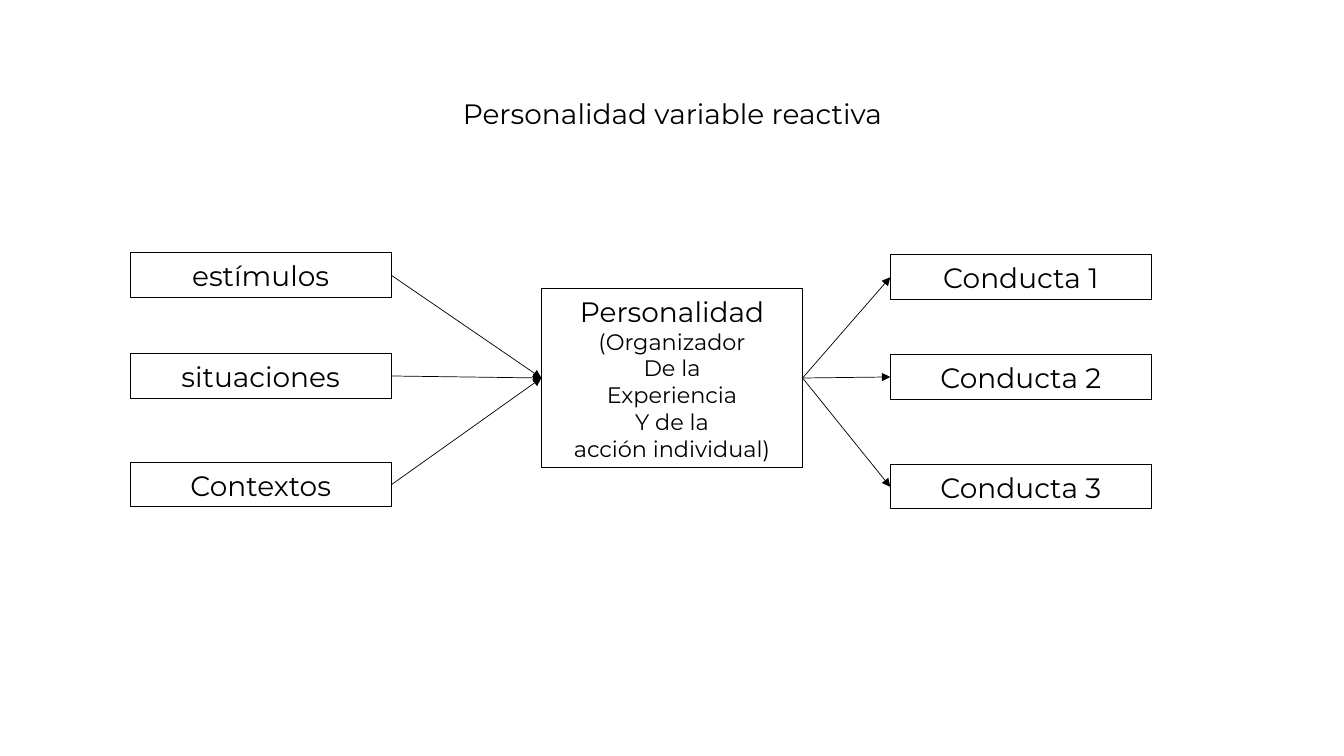
"""Build a slide showing personality as a reactive variable between inputs and conducts."""
from lxml.etree import SubElement
from pptx import Presentation
from pptx.dml.color import RGBColor
from pptx.enum.shapes import MSO_CONNECTOR, MSO_SHAPE
from pptx.enum.text import MSO_ANCHOR, MSO_AUTO_SIZE, PP_ALIGN
from pptx.oxml.ns import qn
from pptx.util import Inches, Pt


def color(hex_code):
    return RGBColor.from_string(hex_code)


def write(shape, text, size=20, detail_size=16, font="Montserrat", ink="000000"):
    frame = shape.text_frame
    frame.word_wrap = True
    frame.auto_size = MSO_AUTO_SIZE.NONE
    frame.vertical_anchor = MSO_ANCHOR.MIDDLE
    frame.text = text
    for index, paragraph in enumerate(frame.paragraphs):
        paragraph.alignment = PP_ALIGN.CENTER
        paragraph.font.name = font
        paragraph.font.size = Pt(detail_size if index else size)
        paragraph.font.color.rgb = color(ink)


BOX_WIDTH, BOX_HEIGHT = 2.59, 0.44
INPUT_LEFT, CENTER_LEFT, CONDUCT_LEFT = 1.29, 5.37, 8.83
CENTER_TOP, CENTER_HEIGHT = 2.86, 1.78
CENTER_MIDDLE = CENTER_TOP + CENTER_HEIGHT / 2

presentation = Presentation()
presentation.slide_width = Inches(13.33)
presentation.slide_height = Inches(7.5)
slide = presentation.slides.add_slide(presentation.slide_layouts[5])

title = slide.shapes.title
title.left, title.top = Inches(3.46), Inches(0.9)
title.width, title.height = Inches(6.42), Inches(0.44)
write(title, "Personalidad variable reactiva")

boxes = [(
    "Personalidad\n(Organizador\nDe la\nExperiencia\nY de la\nacción individual)",
    CENTER_LEFT, CENTER_TOP, CENTER_HEIGHT,
)]
arrows = []
for stimulus, top in [("estímulos", 2.51), ("situaciones", 3.51), ("Contextos", 4.59)]:
    boxes.append((stimulus, INPUT_LEFT, top, BOX_HEIGHT))
    arrows.append((INPUT_LEFT + BOX_WIDTH, top + BOX_HEIGHT / 2, CENTER_LEFT, CENTER_MIDDLE))
for number, top in enumerate([2.53, 3.52, 4.61], start=1):
    boxes.append((f"Conducta {number}", CONDUCT_LEFT, top, BOX_HEIGHT))
    arrows.append((CENTER_LEFT + BOX_WIDTH, CENTER_MIDDLE, CONDUCT_LEFT, top + BOX_HEIGHT / 2))

for text, left, top, height in boxes:
    box = slide.shapes.add_shape(
        MSO_SHAPE.RECTANGLE, Inches(left), Inches(top), Inches(BOX_WIDTH), Inches(height))
    box.shadow.inherit = False
    box.fill.background()
    box.line.color.rgb = color("000000")
    box.line.width = Pt(0.75)
    write(box, text)

for ends in arrows:
    arrow = slide.shapes.add_connector(MSO_CONNECTOR.STRAIGHT, *map(Inches, ends))
    arrow.line.color.rgb = color("000000")
    arrow.line.width = Pt(0.5)
    SubElement(arrow.line._get_or_add_ln(), qn("a:tailEnd"), type="triangle")
    SubElement(arrow._element.spPr, qn("a:effectLst"))

presentation.save("out.pptx")
